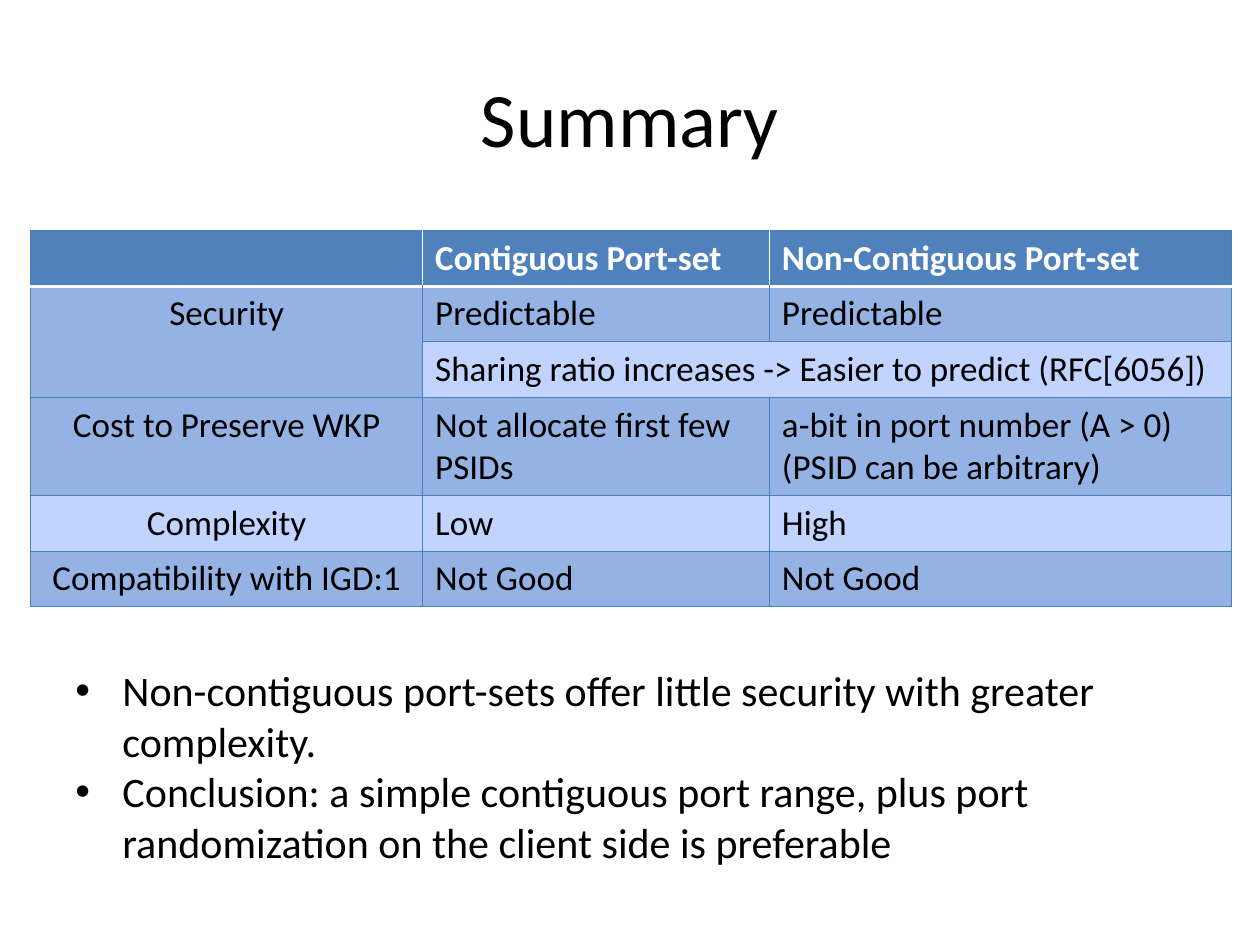
import pptx
import pptx.util
import pptx.dml.color
import pptx.enum.text
import pptx.oxml
import pptx.oxml.ns
import lxml.etree

Cm = pptx.util.Cm
Pt = pptx.util.Pt
ALIGN = pptx.enum.text.PP_ALIGN
HEADER, DARK, LIGHT = "4F81BD", "94B2E4", "C0D4FF"
BORDER = "4B7EBC"


def set_font(paragraph, size, colour, bold=False):
    for run in paragraph.runs:
        run.font.name = "Calibri"
        run.font.size = Pt(size)
        run.font.bold = bold
        run.font.color.rgb = pptx.dml.color.RGBColor.from_string(colour)


def set_border(cell, side, colour, width):
    properties = cell._tc.get_or_add_tcPr()
    line = pptx.oxml.parse_xml(
        f'<a:ln{side} {pptx.oxml.ns.nsdecls("a")} w="{Pt(width)}"><a:solidFill>'
        f'<a:srgbClr val="{colour}"/></a:solidFill></a:ln{side}>')
    # Lines come before the fill, in the order they are added
    position = sum(1 for child in properties if "}ln" in child.tag)
    properties.insert(position, line)


presentation = pptx.Presentation()
presentation.slide_width = Cm(25.4)
presentation.slide_height = Cm(19.05)
slide = presentation.slides.add_slide(presentation.slide_layouts[5])

# Title
title = slide.shapes.title
title.left, title.top, title.width, title.height = Cm(1.27), Cm(0.76), Cm(22.86), Cm(3.18)
title.text_frame.text = "Summary"
title.text_frame.vertical_anchor = pptx.enum.text.MSO_ANCHOR.MIDDLE
title.text_frame.paragraphs[0].alignment = ALIGN.CENTER
set_font(title.text_frame.paragraphs[0], 44, "000000")

# Comparison table: fill, row height in cm, cell texts
rows = [
    (HEADER, 1.12, ["", "Contiguous Port-set", "Non-Contiguous Port-set"]),
    (DARK, 1.12, ["Security", "Predictable", "Predictable"]),
    (LIGHT, 1.12, ["", "Sharing ratio increases -> Easier to predict (RFC[6056])", ""]),
    (DARK, 1.98, ["Cost to Preserve WKP", "Not allocate first few PSIDs",
                  "a-bit in port number (A > 0)\n(PSID can be arbitrary)"]),
    (LIGHT, 1.12, ["Complexity", "Low", "High"]),
    (DARK, 1.12, ["Compatibility with IGD:1", "Not Good", "Not Good"]),
]
column_widths = [7.9, 6.99, 9.32]
table = slide.shapes.add_table(len(rows), len(column_widths), Cm(0.62), Cm(4.65),
                               Cm(sum(column_widths)), Cm(sum(row[1] for row in rows))).table
for column, width in zip(table.columns, column_widths):
    column.width = Cm(width)

for row_index, (fill, height, texts) in enumerate(rows):
    table.rows[row_index].height = Cm(height)
    is_header = row_index == 0
    for column_index, text in enumerate(texts):
        cell = table.cell(row_index, column_index)
        cell.fill.solid()
        cell.fill.fore_color.rgb = pptx.dml.color.RGBColor.from_string(fill)
        cell.text_frame.text = text
        for paragraph in cell.text_frame.paragraphs:
            paragraph.alignment = ALIGN.CENTER if column_index == 0 else ALIGN.LEFT
            set_font(paragraph, 20, "FFFFFF" if is_header else "000000", is_header)

        # The header has no inner vertical lines and a white rule below it
        if not is_header or column_index == 0:
            set_border(cell, "L", BORDER, 0.75)
        if not is_header or column_index == len(texts) - 1:
            set_border(cell, "R", BORDER, 0.75)
        set_border(cell, "T", *(("FFFFFF", 2) if row_index == 1 else (BORDER, 0.75)))
        set_border(cell, "B", *(("FFFFFF", 2) if is_header else (BORDER, 0.75)))

table.cell(1, 0).merge(table.cell(2, 0))
table.cell(2, 1).merge(table.cell(2, 2))

# Conclusions
conclusions = [
    "Non-contiguous port-sets offer little security with greater complexity.",
    "Conclusion: a simple contiguous port range, plus port randomization "
    "on the client side is preferable",
]
text_box = slide.shapes.add_textbox(Cm(1.27), Cm(13.28), Cm(23.55), Cm(4.37))
text_box.text_frame.word_wrap = True
text_box.text_frame.text = "\n".join(conclusions)
for paragraph in text_box.text_frame.paragraphs:
    set_font(paragraph, 24, "000000")
    properties = paragraph._p.get_or_add_pPr()
    properties.set("marL", str(Cm(0.95)))
    properties.set("indent", str(-Cm(0.95)))
    for tag, name, value in [("a:buFont", "typeface", "Arial"), ("a:buChar", "char", "•")]:
        lxml.etree.SubElement(properties, pptx.oxml.ns.qn(tag)).set(name, value)

presentation.save("out.pptx")
